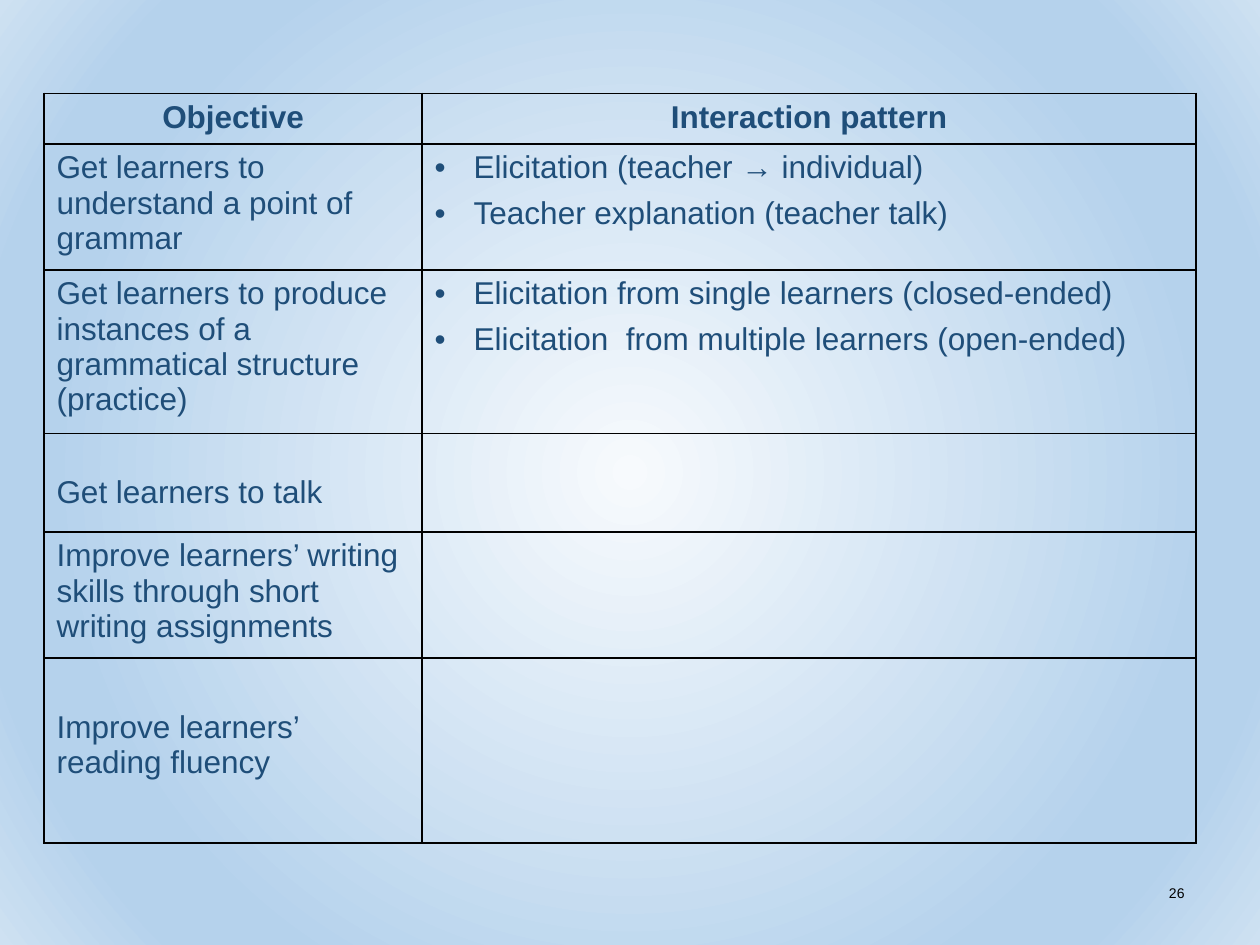
from dataclasses import dataclass

from pptx import Presentation
from pptx.dml.color import RGBColor as RGB
from pptx.enum.text import MSO_ANCHOR as Anchor, PP_ALIGN as Align
from pptx.oxml import parse_xml
from pptx.oxml.ns import nsdecls
from pptx.util import Cm, Pt


@dataclass(frozen=True)
class Theme:
    font: str = "Arial"
    ink: str = "1F4E79"
    line: str = "000000"
    text_size: int = 18
    number_size: int = 8
    gap: int = 6
    backdrop: tuple = ((0, "F7FAFD"), (74, "B5D2EC"), (83, "B5D2EC"), (100, "CEE1F2"))


class Deck:
    def __init__(self, prs, theme):
        self.theme = theme
        self.s = prs.slides.add_slide(prs.slide_layouts[6])

    def background(self):
        stops = "".join(
            f'<a:gs pos="{pos * 1000}"><a:srgbClr val="{color}"/></a:gs>'
            for pos, color in self.theme.backdrop
        )
        bg = parse_xml(
            f'<p:bg {nsdecls("p", "a")}><p:bgPr><a:gradFill rotWithShape="1">'
            f'<a:gsLst>{stops}</a:gsLst><a:path path="circle">'
            '<a:fillToRect l="50000" t="50000" r="50000" b="50000"/></a:path>'
            "</a:gradFill><a:effectLst/></p:bgPr></p:bg>"
        )
        self.s.element.cSld.insert(0, bg)

    def run(self, p, text, size, color, bold=False):
        r = p.add_run()
        r.text = text
        r.font.name = self.theme.font
        r.font.size = Pt(size)
        r.font.bold = bold
        r.font.color.rgb = RGB.from_string(color)

    def bullet(self, p):
        pPr = p._p.get_or_add_pPr()
        pPr.set("marL", str(Cm(0.79)))
        pPr.set("indent", str(-Cm(0.79)))
        pPr.append(parse_xml(f'<a:buFont {nsdecls("a")} typeface="Arial"/>'))
        pPr.append(parse_xml(f'<a:buChar {nsdecls("a")} char="•"/>'))

    def borders(self, cell):
        tcPr = cell._tc.get_or_add_tcPr()
        for i, side in enumerate("LRTB"):
            tcPr.insert(i, parse_xml(
                f'<a:ln{side} {nsdecls("a")} w="{Pt(1)}"><a:solidFill>'
                f'<a:srgbClr val="{self.theme.line}"/></a:solidFill></a:ln{side}>'
            ))

    def cell(self, cell, lines, header=False, bullets=False, top=0.13):
        cell.fill.background()
        self.borders(cell)
        cell.margin_left = cell.margin_right = Cm(0.25)
        cell.margin_top, cell.margin_bottom = Cm(top), Cm(0.13)
        tf = cell.text_frame
        for i, line in enumerate(lines):
            p = tf.add_paragraph() if i else tf.paragraphs[0]
            p.space_after = Pt(self.theme.gap)
            if header:
                p.alignment = Align.CENTER
                p.space_before = Pt(self.theme.gap)
            if bullets:
                self.bullet(p)
            self.run(p, line, self.theme.text_size, self.theme.ink, header)

    def table(self, left, top, widths, header, rows):
        heights = [1.02] + [row[0] for row in rows]
        frame = self.s.shapes.add_table(
            len(heights), len(widths), Cm(left), Cm(top), Cm(sum(widths)), Cm(sum(heights))
        )
        table = frame.table
        table.first_row = table.horz_banding = False
        for column, width in zip(table.columns, widths):
            column.width = Cm(width)
        for row, height in zip(table.rows, heights):
            row.height = Cm(height)
        for i, text in enumerate(header):
            self.cell(table.cell(0, i), [text], header=True)
        for i, (_, inset, objective, patterns) in enumerate(rows, 1):
            self.cell(table.cell(i, 0), [objective], top=inset)
            self.cell(table.cell(i, 1), patterns, bullets=True)

    def page_number(self, text, left, top, width, height):
        sp = self.s.shapes.add_textbox(Cm(left), Cm(top), Cm(width), Cm(height))
        tf = sp.text_frame
        tf.word_wrap = True
        tf.vertical_anchor = Anchor.MIDDLE
        p = tf.paragraphs[0]
        p.alignment = Align.RIGHT
        self.run(p, text, self.theme.number_size, self.theme.line)


def main():
    prs = Presentation()
    prs.slide_width, prs.slide_height = Cm(25.4), Cm(19.05)
    deck = Deck(prs, Theme())
    deck.background()
    rows = [
        (2.54, 0.13, "Get learners to understand a point of grammar",
         ["Elicitation (teacher → individual)", "Teacher explanation (teacher talk)"]),
        (3.3, 0.13, "Get learners to produce instances of a grammatical structure (practice)",
         ["Elicitation from single learners (closed-ended)",
          "Elicitation  from multiple learners (open-ended)"]),
        (1.98, 0.84, "Get learners to talk", []),
        (2.54, 0.13, "Improve learners’ writing skills through short writing assignments", []),
        (3.73, 1.05, "Improve learners’ reading fluency", []),
    ]
    deck.table(0.89, 1.88, [7.62, 15.6], ["Objective", "Interaction pattern"], rows)
    deck.page_number("26", 18.21, 17.35, 5.92, 1.32)
    prs.save("out.pptx")


if __name__ == "__main__":
    main()
